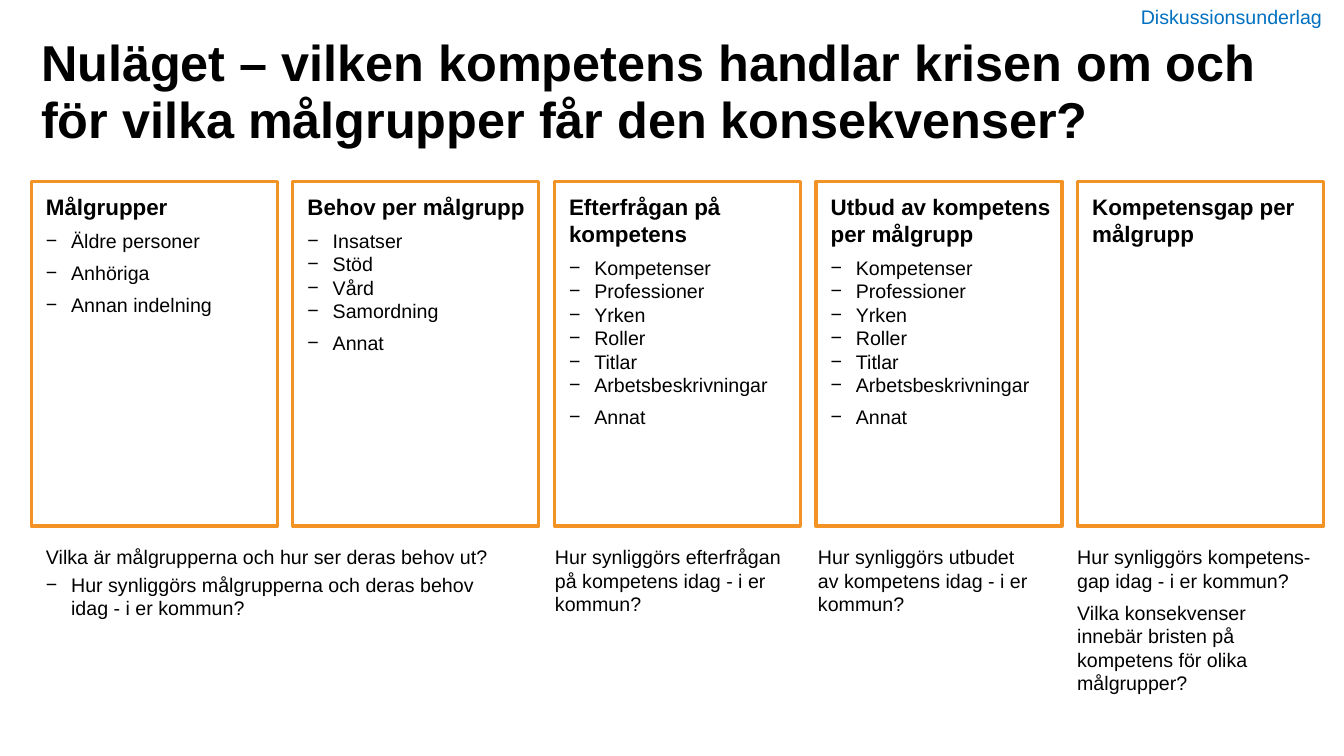
"""Build the slide on competence needs per target group."""
from dataclasses import dataclass
from typing import Any

from lxml import etree
from pptx import Presentation
from pptx.dml.color import RGBColor
from pptx.enum.shapes import MSO_SHAPE
from pptx.enum.text import MSO_ANCHOR, PP_ALIGN
from pptx.oxml.ns import qn
from pptx.util import Pt

RECTANGLE = MSO_SHAPE.RECTANGLE
TOP = MSO_ANCHOR.TOP
LEFT = PP_ALIGN.LEFT

FONT = "Arial"
BLACK, BLUE, ORANGE = "000000", "0070C0", "F39325"
PAGE_WIDTH, PAGE_HEIGHT = 960, 540
COLUMN_LEFT, COLUMN_STEP, COLUMN_WIDTH = 22.3, 186.85, 175.8
COLUMN_TOP, COLUMN_HEIGHT = 129.6, 246.2
NOTE_TOP = 380.9
TEXT_INDENT, BULLET_INDENT, BULLET_HANG = 2, 20, -18
PANEL_MARGINS = (8.5, 8.5, 7.2, 5.7)
PLAIN_MARGINS = (7.2, 3.6, 7.2, 3.6)


@dataclass
class Line:
    text: str
    size: float = 14
    bold: bool = False
    bullet: bool = False
    after: float = 6
    indent: float = TEXT_INDENT
    spacing: float = 1.0
    color: str = BLACK


@dataclass
class Column:
    heading: str
    items: list[str]
    gap_from: int


@dataclass
class Note:
    left: float
    width: float
    height: float
    lines: list[Line]


JOB_TERMS = ["Kompetenser", "Professioner", "Yrken", "Roller", "Titlar",
             "Arbetsbeskrivningar", "Annat"]
COLUMNS = [
    Column("Målgrupper", ["Äldre personer", "Anhöriga", "Annan indelning"], 0),
    Column("Behov per målgrupp",
           ["Insatser", "Stöd", "Vård", "Samordning", "Annat"], 3),
    Column("Efterfrågan på kompetens", JOB_TERMS, 5),
    Column("Utbud av kompetens per målgrupp", JOB_TERMS, 5),
    Column("Kompetensgap per målgrupp", [], 0),
]
NOTES = [
    Note(22.3, 334.1, 119.5, [
        Line("Vilka är målgrupperna och hur ser deras behov ut?", after=3),
        Line("Hur synliggörs målgrupperna och deras behov idag - i er kommun?",
             bullet=True)]),
    Note(385.9, 188.6, 97.2, [
        Line("Hur synliggörs efterfrågan på kompetens idag - i er kommun?")]),
    Note(573.8, 175.7, 97.2, [
        Line("Hur synliggörs utbudet av kompetens idag - i er kommun?")]),
    Note(758.9, 188.6, 126.7, [
        Line("Hur synliggörs kompetens-gap idag - i er kommun?"),
        Line("Vilka konsekvenser innebär bristen på kompetens för olika "
             "målgrupper?")]),
]


def color_of(value: str) -> RGBColor:
    """Turn a hex string into a colour."""
    return RGBColor.from_string(value)


def apply(target: Any, values: dict[str, Any]) -> None:
    """Set each named value on the target."""
    for name, value in values.items():
        setattr(target, name, value)


def write_line(para: Any, line: Line) -> None:
    """Write one formatted line into a paragraph."""
    properties = para._p.get_or_add_pPr()
    indent = BULLET_INDENT if line.bullet else line.indent
    properties.set("marL", str(Pt(indent)))
    properties.set("indent", str(Pt(BULLET_HANG if line.bullet else 0)))
    if line.bullet:
        etree.SubElement(properties, qn("a:buFont")).set("typeface", FONT)
        etree.SubElement(properties, qn("a:buChar")).set("char", "−")
    else:
        etree.SubElement(properties, qn("a:buNone"))
    apply(para, {"alignment": LEFT, "space_after": Pt(line.after),
                 "line_spacing": line.spacing})
    span = para.add_run()
    span.text = line.text
    apply(span.font, {"name": FONT, "size": Pt(line.size), "bold": line.bold})
    span.font.color.rgb = color_of(line.color)


def fill_text(box: Any, lines: list[Line],
              margins: tuple[float, ...] = PANEL_MARGINS) -> None:
    """Write lines into a box with the given margins."""
    frame = box.text_frame
    names = ("margin_left", "margin_top", "margin_right", "margin_bottom")
    apply(frame, {name: Pt(size) for name, size in zip(names, margins)})
    apply(frame, {"word_wrap": True, "vertical_anchor": TOP})
    for index, line in enumerate(lines):
        para = frame.add_paragraph() if index else frame.paragraphs[0]
        write_line(para, line)


def add_text(page: Any, place: tuple[float, ...], lines: list[Line],
             margins: tuple[float, ...] = PANEL_MARGINS) -> None:
    """Add a text box at a place given in points."""
    box = page.shapes.add_textbox(*map(Pt, place))
    fill_text(box, lines, margins)


def add_column(page: Any, index: int, column: Column) -> None:
    """Add one outlined column with its heading and bullets."""
    place = (COLUMN_LEFT + index * COLUMN_STEP, COLUMN_TOP,
             COLUMN_WIDTH, COLUMN_HEIGHT)
    box = page.shapes.add_shape(RECTANGLE, *map(Pt, place))
    box.shadow.inherit = False
    box.fill.background()
    box.line.color.rgb = color_of(ORANGE)
    box.line.width = Pt(2.25)
    items = [Line(item, bullet=True, after=6 if row >= column.gap_from else 0)
             for row, item in enumerate(column.items)]
    fill_text(box, [Line(column.heading, size=16, bold=True), *items])


def main() -> None:
    """Create the deck and save it."""
    deck = Presentation()
    apply(deck, {"slide_width": Pt(PAGE_WIDTH), "slide_height": Pt(PAGE_HEIGHT)})
    page = deck.slides.add_slide(deck.slide_layouts[6])
    title = Line("Nuläget – vilken kompetens handlar krisen om och för vilka "
                 "målgrupper får den konsekvenser?",
                 size=36, bold=True, after=0, indent=0, spacing=0.95)
    add_text(page, (22.3, 21.6, 923.8, 55.4), [title], PLAIN_MARGINS)
    for index, column in enumerate(COLUMNS):
        add_column(page, index, column)
    for note in NOTES:
        add_text(page, (note.left, NOTE_TOP, note.width, note.height), note.lines)
    label = Line("Diskussionsunderlag", after=0, indent=0, color=BLUE)
    add_text(page, (807.8, 0, 151.2, 24.2), [label], PLAIN_MARGINS)
    deck.save("out.pptx")


if __name__ == "__main__":
    main()
